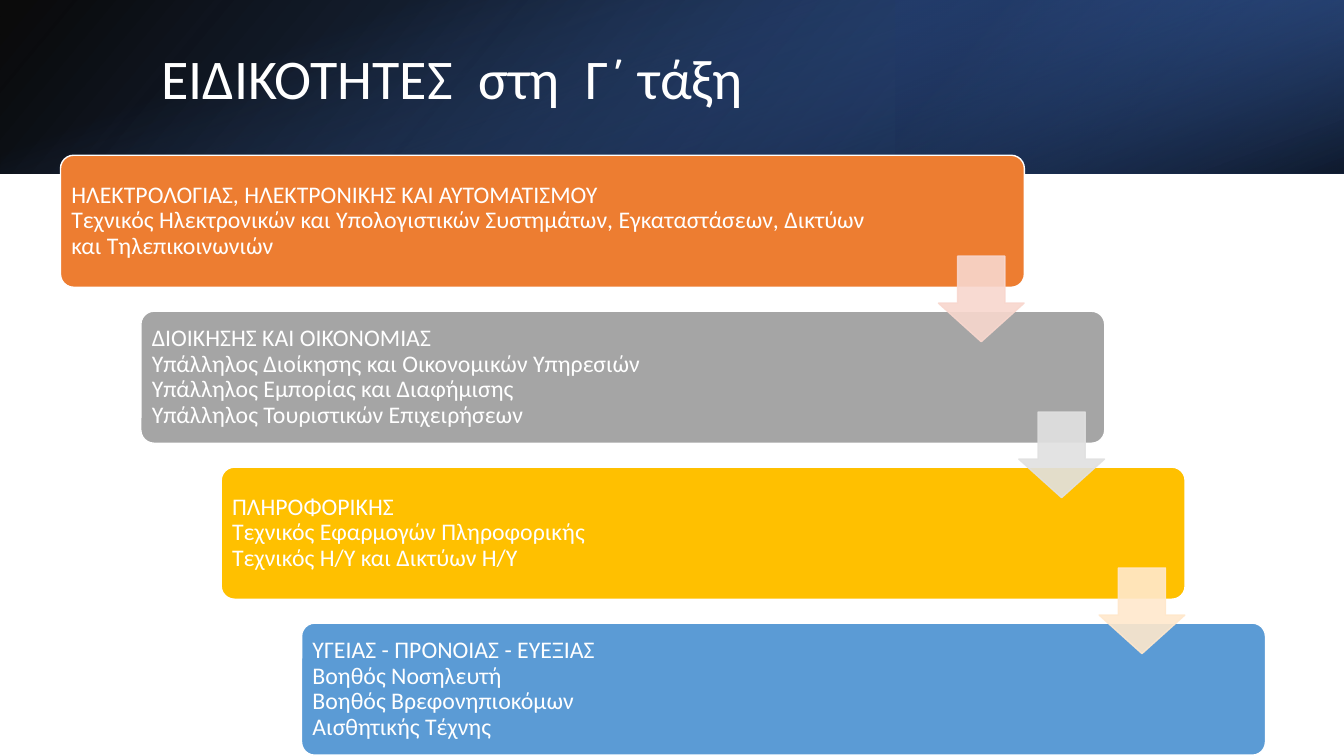
from dataclasses import dataclass

from lxml import etree
from pptx import Presentation
from pptx.dml.color import RGBColor
from pptx.enum.shapes import MSO_SHAPE
from pptx.enum.text import MSO_ANCHOR
from pptx.oxml.ns import qn
from pptx.util import Pt

RECTANGLE = MSO_SHAPE.RECTANGLE
ROUNDED = MSO_SHAPE.ROUNDED_RECTANGLE
DOWN_ARROW = MSO_SHAPE.DOWN_ARROW
MIDDLE = MSO_ANCHOR.MIDDLE

COLORS = {
    "white": "FFFFFF", "black": "000000",
    "navy": "203864", "deep_blue": "2F5597", "blue": "4472C4",
    "orange": "ED7D31", "gray": "A5A5A5", "gold": "FFC000", "sky": "5B9BD5",
    "pale_orange": "F8D7CE", "pale_gray": "E1E1E1", "pale_gold": "FFE8CC",
}
PAGE_WIDTH, PAGE_HEIGHT = 960, 540
BANNER_HEIGHT = 123.84
CARD_LEFT, CARD_TOP, CARD_WIDTH, CARD_HEIGHT = 43.2, 110.9, 688.5, 94.3
STEP_X, STEP_Y = 57.4, 111.4
TEXT_INSET = 2.8
ARROW_LEFT, ARROW_TOP, ARROW_SIZE = 670.3, 182.9, 61.2


@dataclass(frozen=True)
class Stop:
    position: int
    color: str
    alpha: int


@dataclass(frozen=True)
class Layer:
    left: float
    top: float
    width: float
    height: float
    angle: int
    stops: tuple[Stop, Stop]
    rotation: int = 0
    flipped: bool = False


@dataclass(frozen=True)
class Specialty:
    color: str
    text_width: float
    lines: tuple[str, ...]


LAYERS = (
    Layer(0, 0, PAGE_WIDTH, BANNER_HEIGHT, 140,
          (Stop(0, "black", 96), Stop(100, "deep_blue", 100)), flipped=True),
    Layer(PAGE_WIDTH * 2 / 3, 0, PAGE_WIDTH / 3, BANNER_HEIGHT, 320,
          (Stop(19, "navy", 68), Stop(100, "blue", 79)), 180, True),
    Layer((PAGE_WIDTH - BANNER_HEIGHT) / 2, (BANNER_HEIGHT - PAGE_WIDTH) / 2,
          BANNER_HEIGHT, PAGE_WIDTH, 340,
          (Stop(23, "blue", 0), Stop(99, "black", 74)), 90),
)
SPECIALTIES = (
    Specialty("orange", 578.9, (
        "ΗΛΕΚΤΡΟΛΟΓΙΑΣ, ΗΛΕΚΤΡΟΝΙΚΗΣ ΚΑΙ ΑΥΤΟΜΑΤΙΣΜΟΥ",
        "Τεχνικός Ηλεκτρονικών και Υπολογιστικών Συστημάτων, "
        "Εγκαταστάσεων, Δικτύων και Τηλεπικοινωνιών")),
    Specialty("gray", 564, (
        "ΔΙΟΙΚΗΣΗΣ ΚΑΙ ΟΙΚΟΝΟΜΙΑΣ",
        "Υπάλληλος Διοίκησης και Οικονομικών Υπηρεσιών",
        "Υπάλληλος Εμπορίας και Διαφήμισης",
        "Υπάλληλος Τουριστικών Επιχειρήσεων")),
    Specialty("gold", 564, (
        "ΠΛΗΡΟΦΟΡΙΚΗΣ",
        "Τεχνικός Εφαρμογών Πληροφορικής",
        "Τεχνικός Η/Υ και Δικτύων Η/Υ")),
    Specialty("sky", 564, (
        "ΥΓΕΙΑΣ - ΠΡΟΝΟΙΑΣ - ΕΥΕΞΙΑΣ",
        "Βοηθός Νοσηλευτή",
        "Βοηθός Βρεφονηπιοκόμων",
        "Αισθητικής Τέχνης")),
)
ARROW_COLORS = ("pale_orange", "pale_gray", "pale_gold")


def rgb(name: str) -> RGBColor:
    return RGBColor.from_string(COLORS[name])


def add_box(page, kind, left: float, top: float, width: float, height: float):
    box = page.shapes.add_shape(kind, Pt(left), Pt(top), Pt(width), Pt(height))
    box.shadow.inherit = False
    return box


def paint(box, fill: str, line: str) -> None:
    box.fill.solid()
    box.fill.fore_color.rgb = rgb(fill)
    box.line.color.rgb = rgb(line)
    box.line.width = Pt(1)


def add_layer(page, layer: Layer) -> None:
    box = add_box(page, RECTANGLE, layer.left, layer.top, layer.width, layer.height)
    box.line.fill.background()
    box.rotation = layer.rotation
    properties = box._element.spPr
    if layer.flipped:
        properties.find(qn("a:xfrm")).set("flipH", "1")
    gradient = etree.Element(qn("a:gradFill"), rotWithShape="1")
    stop_list = etree.SubElement(gradient, qn("a:gsLst"))
    for stop in layer.stops:
        mark = etree.SubElement(stop_list, qn("a:gs"), pos=str(stop.position * 1000))
        color = etree.SubElement(mark, qn("a:srgbClr"), val=COLORS[stop.color])
        etree.SubElement(color, qn("a:alpha"), val=str(stop.alpha * 1000))
    etree.SubElement(gradient, qn("a:lin"), ang=str(layer.angle * 60000), scaled="0")
    properties.find(qn("a:prstGeom")).addnext(gradient)


def add_text(page, left: float, top: float, width: float, height: float,
             lines: tuple[str, ...], size: float, frame_format: dict) -> None:
    box = page.shapes.add_textbox(Pt(left), Pt(top), Pt(width), Pt(height))
    frame = box.text_frame
    for name, value in frame_format.items():
        setattr(frame, name, value)
    para = frame.paragraphs[0]
    para.line_spacing = 0.9
    para.text = "\n".join(lines)
    for span in para.runs:
        for name, value in {"size": Pt(size), "name": "Calibri"}.items():
            setattr(span.font, name, value)
        span.font.color.rgb = rgb("white")
    for line_break in para._p.findall(qn("a:br")):
        etree.SubElement(line_break, qn("a:rPr"), sz=str(size * 100))


def add_specialty(page, index: int, specialty: Specialty) -> None:
    left, top = CARD_LEFT + index * STEP_X, CARD_TOP + index * STEP_Y
    card = add_box(page, ROUNDED, left, top, CARD_WIDTH, CARD_HEIGHT)
    card.adjustments[0] = 0.1
    paint(card, specialty.color, "white")
    margins = {f"margin_{side}": Pt(5) for side in ("left", "top", "right", "bottom")}
    add_text(page, left + TEXT_INSET, top + TEXT_INSET, specialty.text_width,
             CARD_HEIGHT - 2 * TEXT_INSET, specialty.lines, 17,
             {"word_wrap": True, "vertical_anchor": MIDDLE, **margins})


def add_arrow(page, index: int, color: str) -> None:
    arrow = add_box(page, DOWN_ARROW, ARROW_LEFT + index * STEP_X,
                    ARROW_TOP + index * STEP_Y, ARROW_SIZE, ARROW_SIZE)
    arrow.adjustments[0] = 0.55
    arrow.adjustments[1] = 0.45
    paint(arrow, color, color)
    for tint in arrow._element.spPr.iter(qn("a:srgbClr")):
        etree.SubElement(tint, qn("a:alpha"), val="90000")


def main() -> None:
    deck = Presentation()
    deck.slide_width, deck.slide_height = Pt(PAGE_WIDTH), Pt(PAGE_HEIGHT)
    page = deck.slides.add_slide(deck.slide_layouts[6])
    for layer in LAYERS:
        add_layer(page, layer)
    add_text(page, 108, 27.4, 790.6, 61.2, ("ΕΙΔΙΚΟΤΗΤΕΣ  στη  Γ΄ τάξη",), 40,
             {"word_wrap": True, "vertical_anchor": MIDDLE})
    for index, specialty in enumerate(SPECIALTIES):
        add_specialty(page, index, specialty)
    for index, color in enumerate(ARROW_COLORS):
        add_arrow(page, index, color)
    deck.save("out.pptx")


if __name__ == "__main__":
    main()
